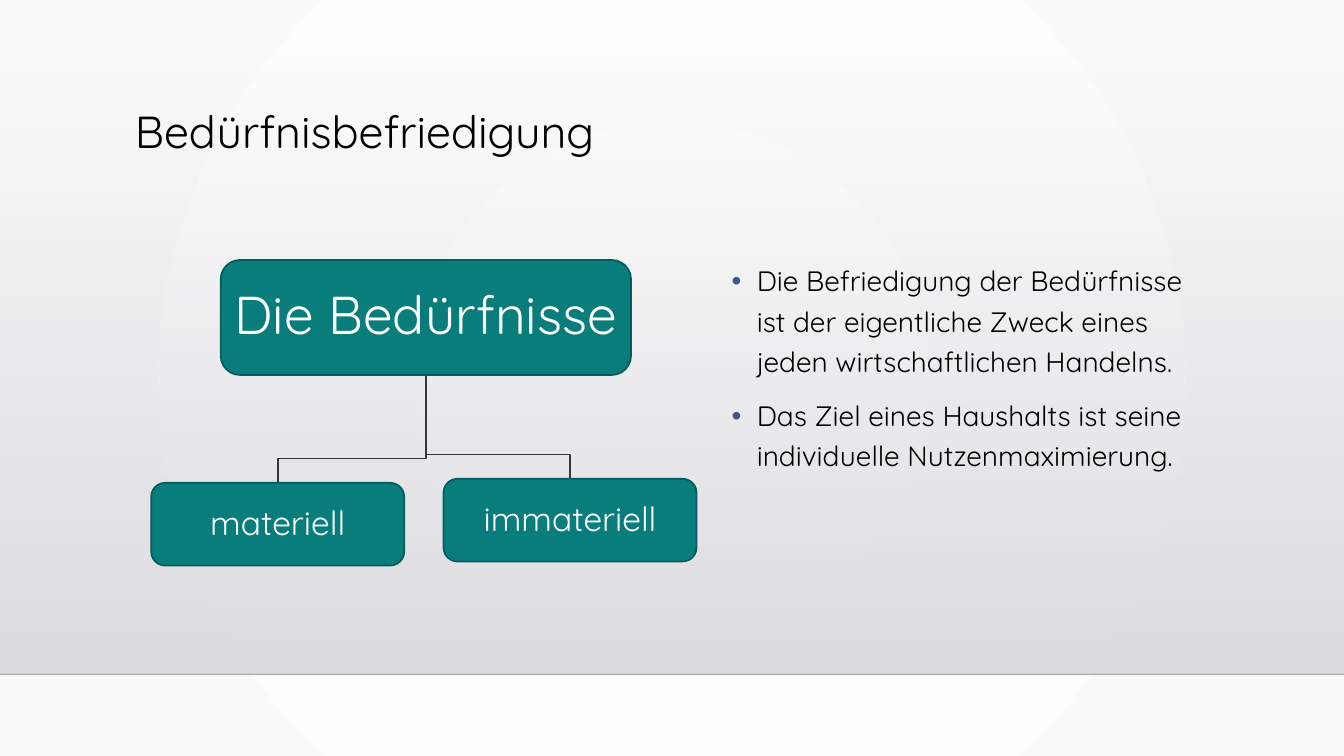
import pptx
import pptx.dml.color
import pptx.enum.shapes
import pptx.enum.text
import pptx.oxml
import pptx.oxml.ns
import pptx.util

COLUMNS, ROWS = 133.33, 75  # square cells, a tenth of an inch each
CELL = pptx.util.Inches(0.1)


def cells(*counts):
    return [pptx.util.Emu(round(count * CELL)) for count in counts]


def rgb(value):
    return pptx.dml.color.RGBColor.from_string(value)


def add_xml(parent, tag, **attributes):
    child = pptx.oxml.parse_xml(f"<a:{tag} {pptx.oxml.ns.nsdecls('a')}/>")
    for name, value in attributes.items():
        child.set(name, str(value))
    parent.append(child)
    return child


def set_gradient(fill, start, end):
    fill.gradient()
    for stop, color in zip(fill.gradient_stops, (start, end)):
        stop.color.rgb = rgb(color)


class NeedsSlide:
    font = "Quicksand"
    ink = "000000"
    box_fill, box_line = "087D7C", "065C5C"
    branch_line = "373737"
    bullet = "415588"
    outline = 1.25

    def __init__(self, slide):
        self.slide = slide
        self.shapes = slide.shapes

    def backdrop(self, center, edge):
        """Fill the slide with a gradient that spreads in circles from its middle."""
        set_gradient(self.slide.background.fill, center, edge)
        gradient = self.slide._element.xpath("./p:cSld/p:bg//a:gradFill")[0]
        for linear in gradient.xpath("./a:lin"):
            gradient.remove(linear)
        circle = add_xml(gradient, "path", path="circle")
        add_xml(circle, "fillToRect", **dict.fromkeys("ltrb", 50000))

    def wall(self, top, bottom, clear, solid):
        """Add a full-width band that fades in from top to bottom."""
        band = self.shapes.add_shape(
            pptx.enum.shapes.MSO_SHAPE.RECTANGLE, *cells(0, top, COLUMNS, bottom - top))
        band.shadow.inherit = False
        band.line.fill.background()
        set_gradient(band.fill, clear, solid)
        band.fill.gradient_angle = 270
        first_color = band._element.spPr.xpath("./a:gradFill//a:srgbClr")[0]
        add_xml(first_color, "alpha", val=0)

    def floor_line(self, row, color, opacity):
        rule = self.shapes.add_connector(
            pptx.enum.shapes.MSO_CONNECTOR.STRAIGHT, *cells(0, row, COLUMNS, row))
        rule.line.color.rgb = rgb(color)
        rule.line.width = pptx.util.Pt(1)
        properties = rule._element.spPr
        add_xml(properties.xpath("./a:ln//a:srgbClr")[0], "alpha", val=opacity * 1000)
        add_xml(properties, "effectLst")

    def style(self, paragraph, size, color, spacing):
        paragraph.line_spacing = spacing
        paragraph.font.name = self.font
        paragraph.font.size = pptx.util.Pt(size)
        paragraph.font.color.rgb = rgb(color)

    def text_frame(self, left, top, width, height):
        frame = self.shapes.add_textbox(*cells(left, top, width, height)).text_frame
        frame.word_wrap = True
        return frame

    def title(self, wording, *place):
        heading = self.text_frame(*place).paragraphs[0]
        heading.text = wording
        self.style(heading, 32, self.ink, 0.9)

    def bullets(self, statements, *place):
        frame = self.text_frame(*place)
        indent = pptx.util.Inches(0.25)
        for index, statement in enumerate(statements):
            paragraph = frame.add_paragraph() if index else frame.paragraphs[0]
            paragraph.text = statement
            if index:
                paragraph.space_before = pptx.util.Pt(10)
            properties = paragraph._p.get_or_add_pPr()
            properties.set("marL", str(indent))
            properties.set("indent", str(-indent))
            add_xml(add_xml(properties, "buClr"), "srgbClr", val=self.bullet)
            add_xml(properties, "buFont", typeface="Arial")
            add_xml(properties, "buChar", char="•")
            self.style(paragraph, 20, self.ink, 1.2)

    def box(self, wording, size, inset, *place):
        node = self.shapes.add_shape(
            pptx.enum.shapes.MSO_SHAPE.ROUNDED_RECTANGLE, *cells(*place))
        node.shadow.inherit = False
        node.fill.solid()
        node.fill.fore_color.rgb = rgb(self.box_fill)
        node.line.color.rgb = rgb(self.box_line)
        node.line.width = pptx.util.Pt(self.outline)
        frame = node.text_frame
        frame.word_wrap = True
        frame.vertical_anchor = pptx.enum.text.MSO_ANCHOR.MIDDLE
        frame.margin_left = frame.margin_right = pptx.util.Inches(inset)
        frame.margin_top = frame.margin_bottom = pptx.util.Inches(inset)
        label = frame.paragraphs[0]
        label.text = wording
        label.alignment = pptx.enum.text.PP_ALIGN.CENTER
        self.style(label, size, "FFFFFF", 0.9)

    def branch(self, start, end, drop):
        """Draw an elbow whose last leg, of length drop, runs down to end."""
        bend = end[1] - drop
        corners = [cells(*point) for point in ((start[0], bend), (end[0], bend), end)]
        builder = self.shapes.build_freeform(*cells(*start))
        builder.add_line_segments(corners, close=False)
        elbow = builder.convert_to_shape()
        elbow.shadow.inherit = False
        elbow.fill.background()
        elbow.line.color.rgb = rgb(self.branch_line)
        elbow.line.width = pptx.util.Pt(self.outline)

    def tree(self, root, root_place, kinds, kind_size):
        left, top, width, height = root_place
        trunk = (left + width / 2, top + height)
        for _, kind_left, kind_top in kinds:
            self.branch(trunk, (kind_left + kind_size[0] / 2, kind_top), 2.4)
        self.box(root, 38, 0.03, *root_place)
        for kind, kind_left, kind_top in kinds:
            self.box(kind, 24, 0.02, kind_left, kind_top, *kind_size)


def main():
    presentation = pptx.Presentation()
    presentation.slide_width, presentation.slide_height = cells(COLUMNS, ROWS)
    page = NeedsSlide(presentation.slides.add_slide(presentation.slide_layouts[6]))
    page.backdrop("FFFFFF", "FAFAFA")
    page.wall(5.1, 66.9, "DCDCE0", "DEDEE2")
    page.floor_line(66.9, "000001", 20)
    page.title("Bedürfnisbefriedigung", 12.4, 10.4, 105, 11.5)
    page.bullets(
        ["Die Befriedigung der Bedürfnisse ist der eigentliche Zweck eines "
         "jeden wirtschaftlichen Handelns.",
         "Das Ziel eines Haushalts ist seine individuelle Nutzenmaximierung."],
        71.6, 25, 48.4, 39.2)
    page.tree("Die Bedürfnisse", (21.9, 25.8, 40.7, 11.4),
              [("materiell", 15, 47.9), ("immateriell", 44, 47.5)], (25.1, 8.2))
    presentation.save("out.pptx")


if __name__ == "__main__":
    main()
